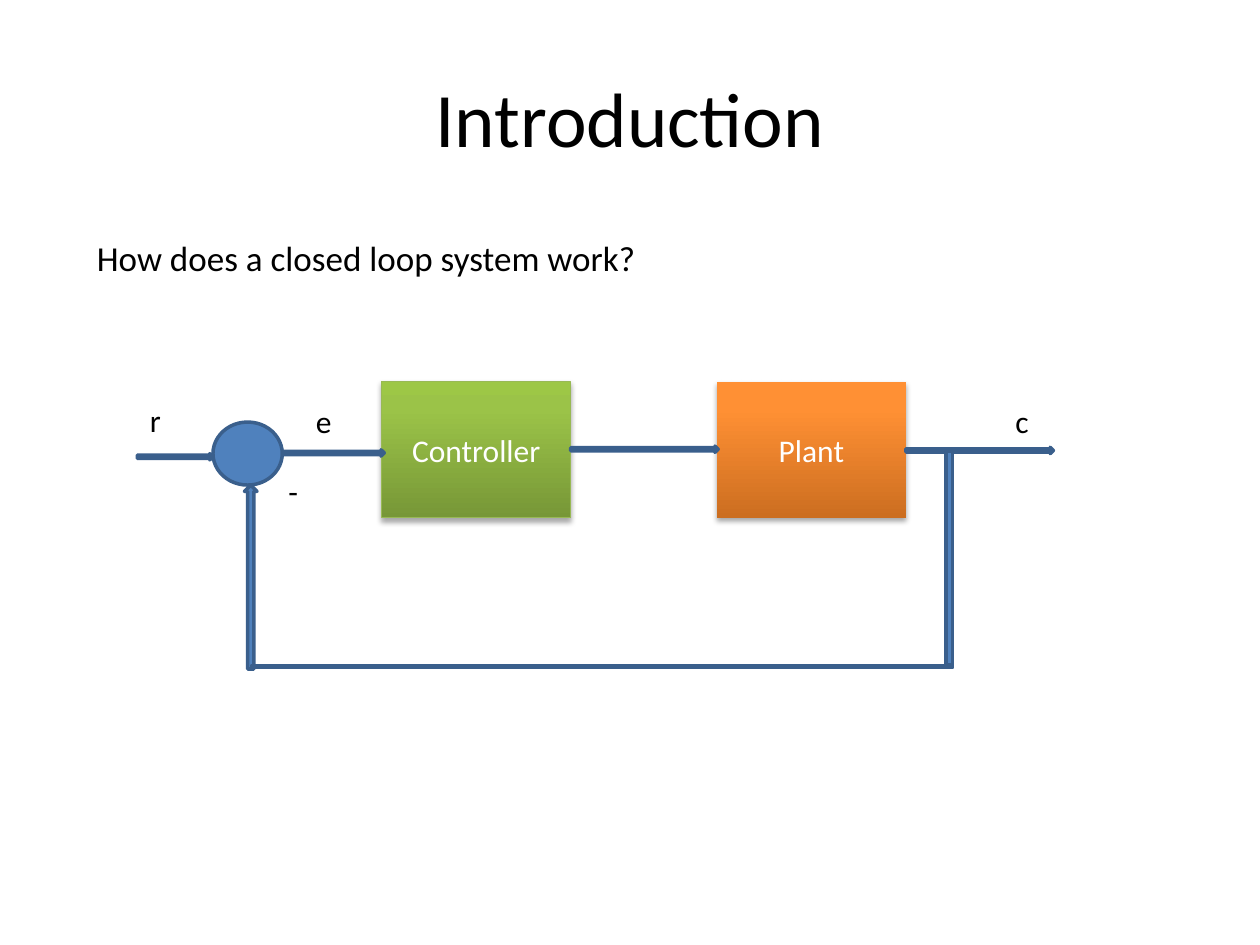
import copy

import lxml.etree
import pptx
import pptx.dml.color
import pptx.enum.shapes
import pptx.enum.text
import pptx.oxml.ns
import pptx.util

RGBColor = pptx.dml.color.RGBColor
Shape = pptx.enum.shapes.MSO_SHAPE
Align = pptx.enum.text.PP_ALIGN
Anchor = pptx.enum.text.MSO_ANCHOR

BLACK = RGBColor(0x00, 0x00, 0x00)
WHITE = RGBColor(0xFF, 0xFF, 0xFF)
BLUE = RGBColor(0x4F, 0x81, 0xBD)
DARK_BLUE = RGBColor(0x3A, 0x5F, 0x8C)
GREEN_LINE = RGBColor(0x98, 0xB9, 0x55)
GREENS = (RGBColor(0x77, 0x97, 0x37), RGBColor(0x9B, 0xC3, 0x48), RGBColor(0x9D, 0xC7, 0x46))
ORANGES = (RGBColor(0xCC, 0x6E, 0x20), RGBColor(0xFF, 0x90, 0x34), RGBColor(0xFF, 0x91, 0x36))
STOP_POSITIONS = (0, 0.8, 1)

FONT = "Calibri"
CELL = pptx.util.Inches(0.1)
BLOCK_TOP, BLOCK_WIDTH, BLOCK_HEIGHT = 30.3, 15, 10.8
CONTROLLER_LEFT, PLANT_LEFT = 30.3, 56.9
BAR = 0.5


def grid(*cells):
    return [round(cell * CELL) for cell in cells]


def write_text(shape, text, size=18, color=BLACK, align=Align.LEFT, anchor=Anchor.TOP):
    frame = shape.text_frame
    frame.vertical_anchor = anchor
    paragraph = frame.paragraphs[0]
    paragraph.alignment = align
    run = paragraph.add_run()
    run.text = text
    run.font.name = FONT
    run.font.size = pptx.util.Pt(size)
    run.font.color.rgb = color


def add_label(slide, text, left, top, width, height=4, size=18):
    box = slide.shapes.add_textbox(*grid(left, top, width, height))
    box.text_frame.word_wrap = False
    box.text_frame.auto_size = pptx.enum.text.MSO_AUTO_SIZE.SHAPE_TO_FIT_TEXT
    write_text(box, text, size=size)


def add_part(slide, kind, left, top, width, height):
    shape = slide.shapes.add_shape(kind, *grid(left, top, width, height))
    shape.shadow.inherit = False
    shape.fill.solid()
    shape.fill.fore_color.rgb = BLUE
    shape.line.color.rgb = DARK_BLUE
    shape.line.width = pptx.util.Pt(2)


def fill_gradient(shape, colors):
    shape.fill.gradient()
    shape.fill.gradient_angle = 90
    last_stop = shape.element.spPr.find(".//" + pptx.oxml.ns.qn("a:gsLst"))[-1]
    last_stop.addnext(copy.deepcopy(last_stop))
    for stop, position, color in zip(shape.fill.gradient_stops, STOP_POSITIONS, colors):
        stop.position = position
        stop.color.rgb = color


def add_shadow(shape):
    qn = pptx.oxml.ns.qn
    shape.shadow.inherit = False
    effects = shape.element.spPr.find(qn("a:effectLst"))
    shadow = lxml.etree.SubElement(
        effects, qn("a:outerShdw"), blurRad="40000", dist="23000", dir="5400000", rotWithShape="0"
    )
    color = lxml.etree.SubElement(shadow, qn("a:srgbClr"), val=str(BLACK))
    lxml.etree.SubElement(color, qn("a:alpha"), val="35000")


def add_block(slide, text, left, colors, line_color=None):
    block = slide.shapes.add_shape(
        Shape.RECTANGLE, *grid(left, BLOCK_TOP, BLOCK_WIDTH, BLOCK_HEIGHT)
    )
    fill_gradient(block, colors)
    add_shadow(block)
    if line_color is None:
        block.line.fill.background()
    else:
        block.line.color.rgb = line_color
        block.line.width = pptx.util.Pt(0.75)
    write_text(block, text, color=WHITE, align=Align.CENTER, anchor=Anchor.MIDDLE)


def main():
    presentation = pptx.Presentation()
    presentation.slide_width, presentation.slide_height = grid(100, 75)
    slide = presentation.slides.add_slide(presentation.slide_layouts[5])

    title = slide.shapes.title
    title.left, title.top, title.width, title.height = grid(5, 3, 90, 12.5)
    write_text(title, "Introduction", size=44, align=Align.CENTER, anchor=Anchor.MIDDLE)
    add_label(slide, "How does a closed loop system work?", 6.7, 18.3, 45.1, 4.4, size=20)

    add_block(slide, "Plant", PLANT_LEFT, ORANGES)
    add_block(slide, "Controller", CONTROLLER_LEFT, GREENS, line_color=GREEN_LINE)

    controller_right = CONTROLLER_LEFT + BLOCK_WIDTH
    plant_right = PLANT_LEFT + BLOCK_WIDTH
    for left, top, width in (
        (22.5, 35.7, 8),
        (controller_right, 35.4, 11.7),
        (plant_right, 35.5, 11.7),
    ):
        add_part(slide, Shape.RIGHT_ARROW, left, top, width, BAR)
    add_part(slide, Shape.RECTANGLE, 75.1, 35.8, BAR, 17)
    add_part(slide, Shape.OVAL, 16.9, 33.5, 5.5, 5)
    add_part(slide, Shape.RIGHT_ARROW, 10.9, 36, 6, BAR)
    add_part(slide, Shape.UP_ARROW, 19.4, 38.5, 1, 14.6)

    for text, left, top, width in (
        ("r", 10.9, 31.3, 2.9),
        ("c", 79.6, 31.4, 3.1),
        ("e", 24.1, 31.4, 3.3),
        ("-", 21.9, 37, 2.9),
    ):
        add_label(slide, text, left, top, width)
    add_part(slide, Shape.MATH_MINUS, 10, 52.5, 75.6, 0.8)

    presentation.save("out.pptx")


if __name__ == "__main__":
    main()
